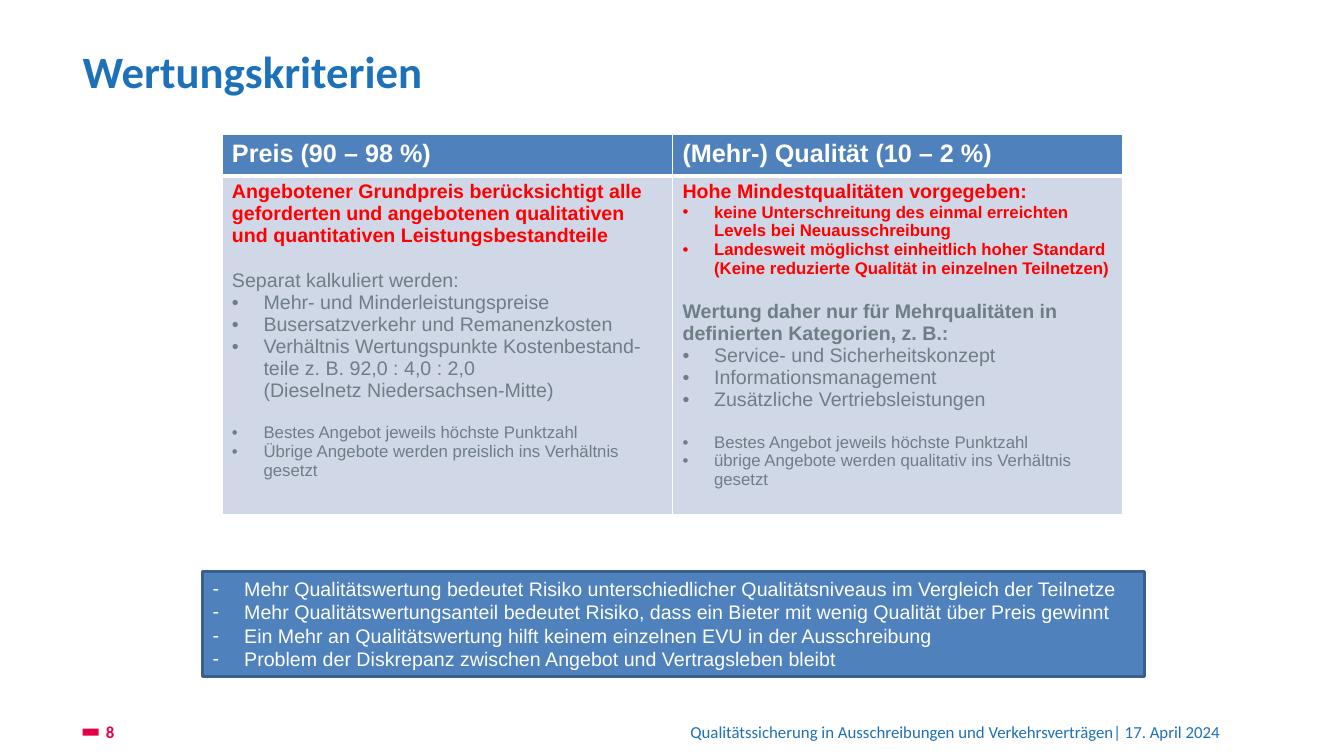
from dataclasses import dataclass
from typing import Any, Optional

from lxml.etree import SubElement
from pptx import Presentation
from pptx.dml.color import RGBColor
from pptx.enum.shapes import MSO_SHAPE
from pptx.enum.text import MSO_ANCHOR, MSO_AUTO_SIZE, PP_ALIGN
from pptx.oxml.ns import qn
from pptx.text.text import TextFrame
from pptx.util import Pt

BLUE, PALE, EDGE = "4F81BD", "D0D8E8", "3A5F8C"
TITLE, FOOT, PINK = "1D71B8", "1D70B7", "E50045"
RED, GREY, WHITE = "FF0000", "6F7D85", "FFFFFF"
INDENT = 22.5


@dataclass
class Line:
    text: str
    size: float = 14
    color: str = GREY
    bold: bool = False
    bullet: Optional[str] = "•"
    gap: float = 0


@dataclass
class Column:
    head: str
    lines: list[Line]


COLUMNS = [
    Column("Preis (90 – 98 %)", [
        Line("Angebotener Grundpreis berücksichtigt alle geforderten und angebotenen "
             "qualitativen und quantitativen Leistungsbestandteile",
             color=RED, bold=True, bullet=None),
        Line("Separat kalkuliert werden:", bullet=None, gap=16),
        Line("Mehr- und Minderleistungspreise"),
        Line("Busersatzverkehr und Remanenzkosten"),
        Line("Verhältnis Wertungspunkte Kostenbestand-teile z. B. 92,0 : 4,0 : 2,0\n"
             "(Dieselnetz Niedersachsen-Mitte)"),
        Line("Bestes Angebot jeweils höchste Punktzahl", size=12, gap=16),
        Line("Übrige Angebote werden preislich ins Verhältnis gesetzt", size=12),
    ]),
    Column("(Mehr-) Qualität (10 – 2 %)", [
        Line("Hohe Mindestqualitäten vorgegeben:", color=RED, bold=True, bullet=None),
        Line("keine Unterschreitung des einmal erreichten Levels bei Neuausschreibung",
             size=12, color=RED, bold=True),
        Line("Landesweit möglichst einheitlich hoher Standard\n"
             "(Keine reduzierte Qualität in einzelnen Teilnetzen)",
             size=12, color=RED, bold=True),
        Line("Wertung daher nur für Mehrqualitäten in definierten Kategorien, z. B.:",
             bold=True, bullet=None, gap=16),
        Line("Service- und Sicherheitskonzept"),
        Line("Informationsmanagement"),
        Line("Zusätzliche Vertriebsleistungen"),
        Line("Bestes Angebot jeweils höchste Punktzahl", size=12, gap=16),
        Line("übrige Angebote werden qualitativ ins Verhältnis gesetzt", size=12),
    ]),
]
RISKS = [
    "Mehr Qualitätswertung bedeutet Risiko unterschiedlicher Qualitätsniveaus "
    "im Vergleich der Teilnetze",
    "Mehr Qualitätswertungsanteil bedeutet Risiko, dass ein Bieter mit wenig Qualität "
    "über Preis gewinnt",
    "Ein Mehr an Qualitätswertung hilft keinem einzelnen EVU in der Ausschreibung",
    "Problem der Diskrepanz zwischen Angebot und Vertragsleben bleibt",
]


def paint(target: Any, color: str) -> None:
    target.solid()
    target.fore_color.rgb = RGBColor.from_string(color)


def write(frame: TextFrame, text: str, *, size: float, color: str, font: str = "Arial",
          bold: bool = False, bullet: Optional[str] = None, gap: float = 0,
          pitch: Optional[float] = None, align: PP_ALIGN = PP_ALIGN.LEFT) -> None:
    para = frame.paragraphs[0] if not frame.text else frame.add_paragraph()
    para.text = text
    if bullet:
        props = para._p.get_or_add_pPr()
        props.set("marL", str(Pt(INDENT)))
        props.set("indent", str(-Pt(INDENT)))
        SubElement(props, qn("a:buFont"), typeface="Arial")
        SubElement(props, qn("a:buChar"), char=bullet)
    para.alignment = align
    para.space_before = Pt(gap)
    if pitch:
        para.line_spacing = Pt(pitch)
    for rest in para._p.findall(qn("a:br")):
        SubElement(rest, qn("a:rPr"), sz=str(int(size * 100)))
    for run in para.runs:
        run.font.name, run.font.size, run.font.bold = font, Pt(size), bold
        run.font.color.rgb = RGBColor.from_string(color)


def place(shape: Any, left: float, top: float, width: float, height: float) -> None:
    shape.left, shape.top = Pt(left), Pt(top)
    shape.width, shape.height = Pt(width), Pt(height)


def setup(frame: TextFrame, anchor: MSO_ANCHOR, side: float, edge: float) -> None:
    frame.word_wrap = True
    frame.auto_size = MSO_AUTO_SIZE.NONE
    frame.vertical_anchor = anchor
    frame.margin_left = frame.margin_right = Pt(side)
    frame.margin_top = frame.margin_bottom = Pt(edge)


def border(cell: Any, **widths: float) -> None:
    props = cell._tc.get_or_add_tcPr()
    for spot, (side, width) in enumerate(widths.items()):
        line = SubElement(props, qn(f"a:ln{side}"), w=str(Pt(width)))
        fill = SubElement(line, qn("a:solidFill"))
        SubElement(fill, qn("a:srgbClr"), val=WHITE)
        props.insert(spot, line)


def grid(slide: Any) -> None:
    table = slide.shapes.add_table(2, 2, Pt(158.5), Pt(96), Pt(643.7), Pt(271.5)).table
    table.horz_banding = False
    table.rows[0].height, table.rows[1].height = Pt(29.5), Pt(242)
    for col, entry in enumerate(COLUMNS):
        head, body = table.cell(0, col), table.cell(1, col)
        paint(head.fill, BLUE)
        paint(body.fill, PALE)
        border(head, L=1, R=1, T=1, B=3)
        border(body, L=1, R=1, T=3, B=1)
        write(head.text_frame, entry.head, size=18, color=WHITE, bold=True)
        for line in entry.lines:
            write(body.text_frame, line.text, size=line.size, color=line.color,
                  bold=line.bold, bullet=line.bullet, gap=line.gap)


def footer(slide: Any) -> None:
    mark = slide.shapes.add_shape(MSO_SHAPE.RECTANGLE, Pt(59), Pt(520.5), Pt(11.5), Pt(5))
    mark.shadow.inherit = False
    paint(mark.fill, PINK)
    mark.line.fill.background()
    page = slide.shapes.add_textbox(Pt(75.6), Pt(507), Pt(37.5), Pt(31))
    setup(page.text_frame, MSO_ANCHOR.MIDDLE, 0, 0)
    write(page.text_frame, "8", size=12, color=PINK, font="Calibri", bold=True)
    note = slide.shapes.add_textbox(Pt(165), Pt(507), Pt(714), Pt(31))
    setup(note.text_frame, MSO_ANCHOR.MIDDLE, 7.2, 3.6)
    write(note.text_frame,
          "Qualitätssicherung in Ausschreibungen und Verkehrsverträgen| 17. April 2024",
          size=12, color=FOOT, font="Calibri", align=PP_ALIGN.RIGHT)


def main() -> None:
    deck = Presentation()
    deck.slide_width, deck.slide_height = Pt(960), Pt(540)
    slide = deck.slides.add_slide(deck.slide_layouts[1])
    title, risks = slide.placeholders
    place(title, 59, 37.5, 821, 42)
    setup(title.text_frame, MSO_ANCHOR.TOP, 0, 0)
    write(title.text_frame, "Wertungskriterien", size=32, color=TITLE,
          font="Calibri", bold=True, pitch=32)
    grid(slide)
    place(risks, 144.7, 408.3, 673, 75)
    paint(risks.fill, BLUE)
    paint(risks.line.fill, EDGE)
    risks.line.width = Pt(2)
    setup(risks.text_frame, MSO_ANCHOR.TOP, 7.2, 3.6)
    for risk in RISKS:
        write(risks.text_frame, risk, size=14, color=WHITE, bullet="-", pitch=16.8)
    footer(slide)
    deck.save("out.pptx")


if __name__ == "__main__":
    main()
